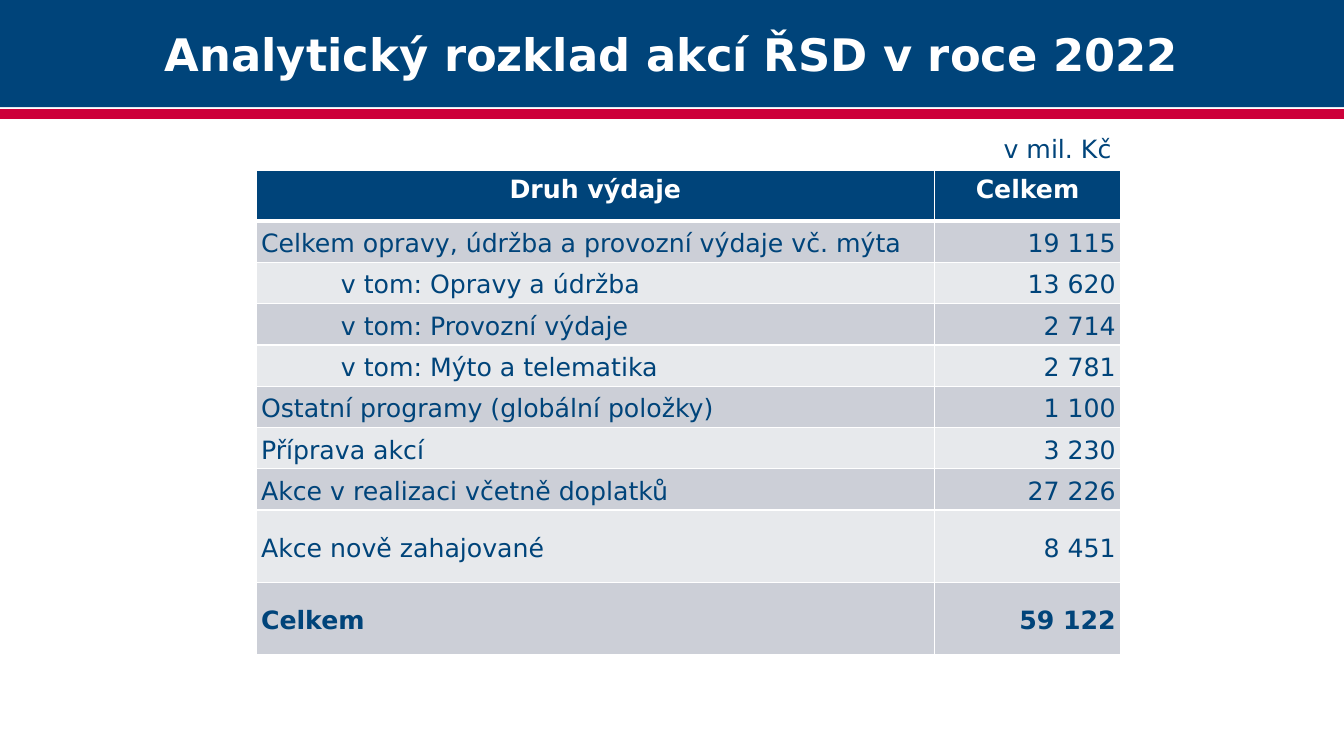
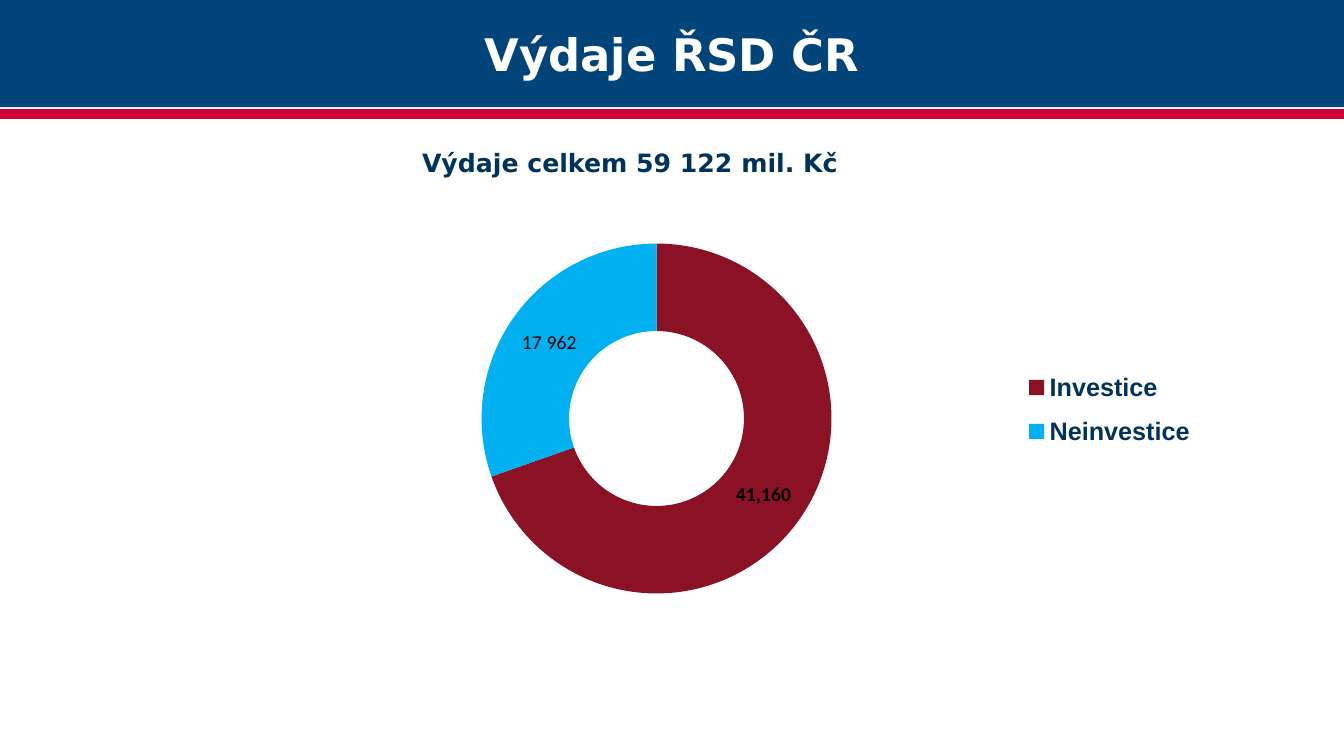
from lxml import etree
from pptx import Presentation
from pptx.chart.data import CategoryChartData
from pptx.dml.color import RGBColor
from pptx.enum.chart import XL_CHART_TYPE, XL_LEGEND_POSITION
from pptx.enum.shapes import MSO_SHAPE
from pptx.enum.text import MSO_ANCHOR, MSO_AUTO_SIZE, PP_ALIGN
from pptx.oxml import parse_xml
from pptx.oxml.ns import nsdecls, qn
from pptx.util import Emu, Pt

EMU_PER_PX = 6350
SLIDE_WIDTH, SLIDE_HEIGHT = 1920, 1080

NAVY = RGBColor(0x00, 0x44, 0x7A)
DARK_NAVY = RGBColor(0x00, 0x33, 0x5C)
RED = RGBColor(0xCD, 0x00, 0x3A)
WHITE = RGBColor(0xFF, 0xFF, 0xFF)
BLACK = RGBColor(0x00, 0x00, 0x00)
ROW_FILLS = (RGBColor(0xCC, 0xCF, 0xD7), RGBColor(0xE7, 0xE9, 0xEC))
BURGUNDY = RGBColor(0x8A, 0x12, 0x24)
SKY = RGBColor(0x00, 0xB0, 0xF0)

RECTANGLE = MSO_SHAPE.RECTANGLE
LEFT, CENTER, RIGHT = PP_ALIGN.LEFT, PP_ALIGN.CENTER, PP_ALIGN.RIGHT
MIDDLE = MSO_ANCHOR.MIDDLE
GROW = MSO_AUTO_SIZE.SHAPE_TO_FIT_TEXT
DOUGHNUT = XL_CHART_TYPE.DOUGHNUT
LEGEND_RIGHT = XL_LEGEND_POSITION.RIGHT

SUB_INDENT = 114
EXPENSES = [
    ("Celkem opravy, údržba a provozní výdaje vč. mýta", "19 115", 0),
    ("v tom: Opravy a údržba", "13 620", SUB_INDENT),
    ("v tom: Provozní výdaje", "2 714", SUB_INDENT),
    ("v tom: Mýto a telematika", "2 781", SUB_INDENT),
    ("Ostatní programy (globální položky)", "1 100", 0),
    ("Příprava akcí", "3 230", 0),
    ("Akce v realizaci včetně doplatků", "27 226", 0),
    ("Akce nově zahajované", "8 451", 0),
    ("Celkem", "59 122", 0),
]
ROW_HEIGHTS = [73] + [59] * 7 + [103] * 2
COLUMN_WIDTHS = [969, 266]


def px(length):
    return Emu(length * EMU_PER_PX)


def style_font(font, size, color, bold, name):
    font.size = Pt(size)
    font.bold = bold
    font.name = name
    font.color.rgb = color


def write_text(frame, text, size=18, color=NAVY, bold=False, font="DejaVu Sans",
               align=LEFT, spacing=None, indent=0):
    paragraph = frame.paragraphs[0]
    paragraph.alignment = align
    if spacing:
        paragraph.line_spacing = spacing
    if indent:
        paragraph._p.get_or_add_pPr().set("marL", str(px(indent)))
    run = paragraph.add_run()
    run.text = text
    style_font(run.font, size, color, bold, font)


def set_borders(cell, top, bottom):
    properties = cell._tc.get_or_add_tcPr()
    widths = {"lnL": 1, "lnR": 1, "lnT": top, "lnB": bottom}
    for position, (side, width) in enumerate(widths.items()):
        line = parse_xml(
            f'<a:{side} {nsdecls("a")} w="{Pt(width)}"><a:solidFill>'
            f'<a:srgbClr val="{WHITE}"/></a:solidFill></a:{side}>')
        properties.insert(position, line)


def set_layout(parent, position, area, frame, inner=False):
    for old in parent.findall(qn("c:layout")):
        parent.remove(old)
    layout = etree.Element(qn("c:layout"))
    manual = etree.SubElement(layout, qn("c:manualLayout"))
    values = {"layoutTarget": "inner"} if inner else {}
    left, top, width, height = area
    values.update(
        xMode="edge", yMode="edge",
        x=(left - frame[0]) / frame[2], y=(top - frame[1]) / frame[3],
        w=width / frame[2], h=height / frame[3])
    for tag, value in values.items():
        etree.SubElement(manual, qn(f"c:{tag}")).set("val", str(value))
    parent.insert(position, layout)


class Deck:
    def __init__(self):
        self.presentation = Presentation()
        self.presentation.slide_width = px(SLIDE_WIDTH)
        self.presentation.slide_height = px(SLIDE_HEIGHT)
        self.slide = None

    def new_slide(self, title):
        layout = self.presentation.slide_layouts[6]
        self.slide = self.presentation.slides.add_slide(layout)
        self.band(156, 14, RED)
        header = self.band(0, 153, NAVY)
        header.text_frame.word_wrap = True
        header.text_frame.vertical_anchor = MIDDLE
        write_text(header.text_frame, title, size=32, color=WHITE, bold=True, align=CENTER)

    def band(self, top, height, color):
        band = self.slide.shapes.add_shape(
            RECTANGLE, px(0), px(top), px(SLIDE_WIDTH), px(height))
        band.shadow.inherit = False
        band.fill.solid()
        band.fill.fore_color.rgb = color
        band.line.fill.background()
        return band

    def label(self, text, area, **text_format):
        frame = self.slide.shapes.add_textbox(*map(px, area)).text_frame
        frame.word_wrap = True
        frame.auto_size = GROW
        write_text(frame, text, **text_format)

    def expense_table(self, left, top, headings, expenses):
        table = self.slide.shapes.add_table(
            len(ROW_HEIGHTS), len(COLUMN_WIDTHS), px(left), px(top),
            px(sum(COLUMN_WIDTHS)), px(sum(ROW_HEIGHTS))).table
        table.horz_banding = False
        for column, width in zip(table.columns, COLUMN_WIDTHS):
            column.width = px(width)
        for row, height in zip(table.rows, ROW_HEIGHTS):
            row.height = px(height)
        for column, heading in enumerate(headings):
            self.cell(table.cell(0, column), heading, NAVY, bottom=3,
                      color=WHITE, bold=True, align=CENTER)
        for row, (kind, amount, indent) in enumerate(expenses, 1):
            fill = ROW_FILLS[(row - 1) % 2]
            top_border = 3 if row == 1 else 1
            total = row == len(expenses)
            for column, (text, align, margin) in enumerate(
                    [(kind, LEFT, indent), (amount, RIGHT, 0)]):
                cell = table.cell(row, column)
                cell.vertical_anchor = MIDDLE
                cell.margin_left = cell.margin_right = px(7)
                cell.margin_top = cell.margin_bottom = 0
                self.cell(cell, text, fill, top=top_border, bold=total,
                          align=align, spacing=1.15, indent=margin)

    def cell(self, cell, text, fill, top=1, bottom=1, **text_format):
        cell.fill.solid()
        cell.fill.fore_color.rgb = fill
        set_borders(cell, top, bottom)
        write_text(cell.text_frame, text, **text_format)

    def doughnut(self, area, ring, legend_area, values, colors):
        data = CategoryChartData(number_format="#,##0")
        data.categories = list(values)
        data.add_series("Series 1", list(values.values()))
        chart = self.slide.shapes.add_chart(DOUGHNUT, *map(px, area), data).chart
        style_font(chart.font, 10, BLACK, False, "Calibri")
        chart.has_title = False
        chart.has_legend = True
        chart.legend.position = LEGEND_RIGHT
        chart.legend.include_in_layout = False
        style_font(chart.legend.font, 18, DARK_NAVY, True, "Arial")
        plot = chart.plots[0]
        plot.vary_by_categories = True
        series = plot.series[0]
        labels = series.data_labels
        labels.show_value = True
        labels.show_percentage = False
        labels.number_format = "#,##0"
        labels.number_format_is_linked = False
        style_font(labels.font, 14, BLACK, True, "Calibri")
        for index, color in enumerate(colors):
            slice_fill = series.points[index].format.fill
            slice_fill.solid()
            slice_fill.fore_color.rgb = color
        write_text(series.points[1].data_label.text_frame, "17 962", size=14,
                   color=BLACK, font="Calibri", align=CENTER)
        plot_area = chart._chartSpace.chart.plotArea
        set_layout(plot_area, 0, ring, area, inner=True)
        set_layout(chart.legend._element, 1, legend_area, area)


def main():
    deck = Deck()

    deck.new_slide("Analytický rozklad akcí ŘSD v roce 2022")
    deck.expense_table(366, 243, ["Druh výdaje", "Celkem"], EXPENSES)
    deck.label("v mil. Kč", (1387, 184, 215, 58), align=RIGHT)

    deck.new_slide("Výdaje ŘSD ČR")
    deck.doughnut((0, 235, 1920, 680), (688, 348, 500, 500), (1450, 511, 270, 148),
                  {"Investice": 41160, "Neinvestice": 17961}, [BURGUNDY, SKY])
    deck.label("Výdaje celkem 59 122 mil. Kč", (520, 204, 760, 58),
               color=DARK_NAVY, bold=True, align=CENTER)

    deck.presentation.save("out.pptx")


if __name__ == "__main__":
    main()
